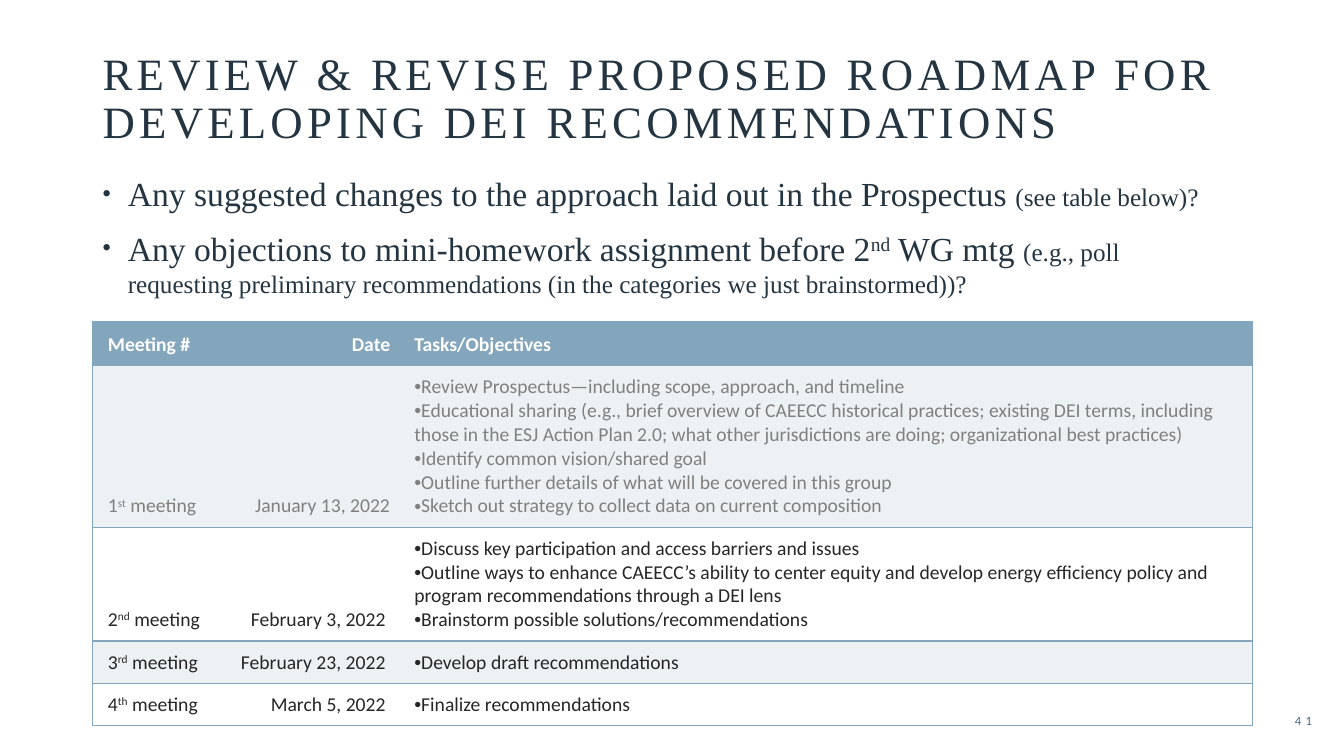
"""Build the roadmap slide with its questions and its table of meetings."""
from dataclasses import dataclass
from typing import NamedTuple

from lxml import etree
from pptx import Presentation
from pptx.dml.color import RGBColor
from pptx.enum.text import MSO_ANCHOR, PP_ALIGN
from pptx.oxml.ns import qn
from pptx.util import Pt

LEFT, RIGHT = PP_ALIGN.LEFT, PP_ALIGN.RIGHT
TOP, MIDDLE, BOTTOM = MSO_ANCHOR.TOP, MSO_ANCHOR.MIDDLE, MSO_ANCHOR.BOTTOM
SCALE = 9144


@dataclass(frozen=True)
class Theme:
    serif: str = "Times New Roman"
    sans: str = "Calibri"
    ink: str = "243541"
    page: str = "486B83"
    line: str = "83A6BC"
    band: str = "EDF1F3"
    white: str = "FFFFFF"
    grey: str = "808080"
    dark: str = "262626"
    title: int = 32
    body: int = 24
    note: int = 18
    cell: int = 14
    tiny: int = 9


THEME = Theme()


class Box(NamedTuple):
    left: int
    top: int
    width: int
    height: int


class Bit(NamedTuple):
    text: str
    size: int
    raised: bool = False


class Style(NamedTuple):
    font: str
    color: str
    bold: bool = False
    space: int = 0


class Meeting(NamedTuple):
    number: str
    suffix: str
    date: str
    tasks: list[str]
    color: str
    fill: str
    height: int


TITLE = "REVIEW & REVISE PROPOSED ROADMAP FOR DEVELOPING DEI RECOMMENDATIONS"
POINTS = [
    [Bit("Any suggested changes to the approach laid out in the Prospectus ", THEME.body),
     Bit("(see table below)?", THEME.note)],
    [Bit("Any objections to mini-homework assignment before 2", THEME.body),
     Bit("nd", THEME.body, True),
     Bit(" WG mtg ", THEME.body),
     Bit("(e.g., poll requesting preliminary recommendations "
         "(in the categories we just brainstormed))?", THEME.note)],
]
HEADS = ["Meeting # ", "Date", "Tasks/Objectives "]
WIDTHS = [130, 174, 846]
HEAD_HEIGHT = 44
MEETINGS = [
    Meeting("1", "st", "January 13, 2022", [
        "Review Prospectus—including scope, approach, and timeline ",
        "Educational sharing (e.g., brief overview of CAEECC historical practices; "
        "existing DEI terms, including those in the ESJ Action Plan 2.0; what other "
        "jurisdictions are doing; organizational best practices) ",
        "Identify common vision/shared goal ",
        "Outline further details of what will be covered in this group ",
        "Sketch out strategy to collect data on current composition ",
    ], THEME.grey, THEME.band, 160),
    Meeting("2", "nd", "February 3, 2022 ", [
        "Discuss key participation and access barriers and issues ",
        "Outline ways to enhance CAEECC’s ability to center equity and develop energy "
        "efficiency policy and program recommendations through a DEI lens ",
        "Brainstorm possible solutions/recommendations ",
    ], THEME.dark, THEME.white, 113),
    Meeting("3", "rd", "February 23, 2022 ", ["Develop draft recommendations "],
            THEME.dark, THEME.band, 42),
    Meeting("4", "th", "March 5, 2022 ", ["Finalize recommendations "],
            THEME.dark, THEME.white, 42),
]


def px(count: int) -> int:
    return count * SCALE


def write(para, bits: list[Bit], style: Style, align=LEFT) -> None:
    para.alignment = align
    for bit in bits:
        run = para.add_run()
        run.text = bit.text
        run.font.name = style.font
        run.font.size = Pt(bit.size)
        run.font.bold = style.bold
        run.font.color.rgb = RGBColor.from_string(style.color)
        props = run._r.get_or_add_rPr()
        if style.space:
            props.set("spc", str(style.space * 100))
        if bit.raised:
            props.set("baseline", "30000")


def bullet(para, indent: int = 0, percent: int = 100) -> None:
    props = para._p.get_or_add_pPr()
    props.set("marL", str(px(indent)))
    props.set("indent", str(-px(indent)))
    etree.SubElement(props, qn("a:buSzPct")).set("val", str(percent * 1000))
    etree.SubElement(props, qn("a:buFont")).set("typeface", "Arial")
    etree.SubElement(props, qn("a:buChar")).set("char", "•")


def fill_lines(frame, lines: list[list[Bit]], style: Style, align=LEFT) -> list:
    paras = [frame.paragraphs[0]] + [frame.add_paragraph() for _ in lines[1:]]
    for para, bits in zip(paras, lines):
        write(para, bits, style, align)
    return paras


def add_text(slide, box: Box, lines: list[list[Bit]], style: Style,
             anchor=TOP, align=LEFT) -> list:
    frame = slide.shapes.add_textbox(*map(px, box)).text_frame
    frame.word_wrap = True
    frame.vertical_anchor = anchor
    return fill_lines(frame, lines, style, align)


def set_edges(cell, shown: set[str]) -> None:
    props = cell._tc.get_or_add_tcPr()
    for spot, side in enumerate("LRTB"):
        edge = etree.Element(qn(f"a:ln{side}"), w=str(Pt(1)))
        if side in shown:
            paint = etree.SubElement(edge, qn("a:solidFill"))
            etree.SubElement(paint, qn("a:srgbClr")).set("val", THEME.line)
        else:
            etree.SubElement(edge, qn("a:noFill"))
        props.insert(spot, edge)


def set_cell(table, row: int, col: int, lines: list[list[Bit]],
             style: Style, fill: str) -> list:
    cell = table.cell(row, col)
    cell.fill.solid()
    cell.fill.fore_color.rgb = RGBColor.from_string(fill)
    cell.vertical_anchor = BOTTOM
    cell.margin_left = px(15)
    cell.margin_right = cell.margin_top = cell.margin_bottom = px(9)
    set_edges(cell, {"T", "B"} | {0: {"L"}, 2: {"R"}}.get(col, set()))
    return fill_lines(cell.text_frame, lines, style, RIGHT if col == 1 else LEFT)


def add_table(slide) -> None:
    heights = [HEAD_HEIGHT] + [meeting.height for meeting in MEETINGS]
    box = Box(92, 319, sum(WIDTHS), sum(heights))
    table = slide.shapes.add_table(len(heights), len(WIDTHS), *map(px, box)).table
    for column, width in zip(table.columns, WIDTHS):
        column.width = px(width)
    for row, height in zip(table.rows, heights):
        row.height = px(height)
    size = THEME.cell
    for col, head in enumerate(HEADS):
        set_cell(table, 0, col, [[Bit(head, size)]],
                 Style(THEME.sans, THEME.white, bold=True), THEME.line)
    for row, item in enumerate(MEETINGS, 1):
        label = [Bit(item.number, size), Bit(item.suffix, size, True), Bit(" meeting ", size)]
        tasks = [[Bit(task, size)] for task in item.tasks]
        style = Style(THEME.sans, item.color)
        for col, lines in enumerate([[label], [[Bit(item.date, size)]], tasks]):
            paras = set_cell(table, row, col, lines, style, item.fill)
            if col == 2:
                for para in paras:
                    bullet(para)


def main() -> None:
    deck = Presentation()
    deck.slide_width, deck.slide_height = px(1333), px(750)
    slide = deck.slides.add_slide(deck.slide_layouts[6])
    title = add_text(slide, Box(92, 15, 1150, 137), [[Bit(TITLE, THEME.title)]],
                     Style(THEME.serif, THEME.ink, space=3), BOTTOM)
    title[0].line_spacing = 0.9
    for para in add_text(slide, Box(92, 167, 1124, 444), POINTS,
                         Style(THEME.serif, THEME.ink)):
        para.space_before = Pt(10)
        bullet(para, 25, 70)
    add_text(slide, Box(1216, 695, 95, 40), [[Bit("41", THEME.tiny)]],
             Style(THEME.sans, THEME.page, space=3), MIDDLE, RIGHT)
    add_table(slide)
    deck.save("out.pptx")


if __name__ == "__main__":
    main()
